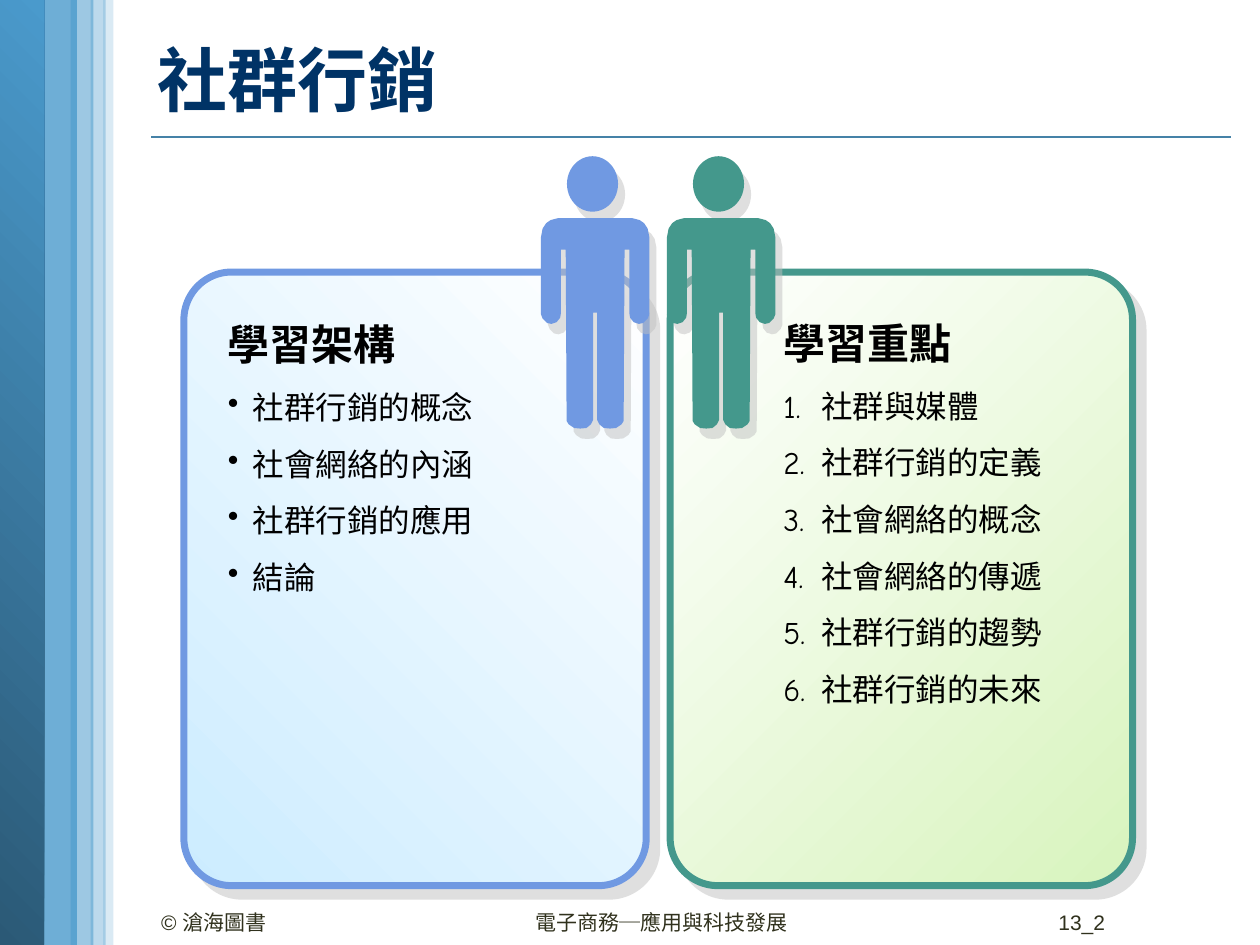
import pptx
import pptx.util
import pptx.dml.color
import pptx.enum.shapes
import pptx.enum.text
import pptx.oxml
import pptx.oxml.ns

Pt = pptx.util.Pt
SHAPE = pptx.enum.shapes.MSO_SHAPE
ALIGN = pptx.enum.text.PP_ALIGN
ANCHOR = pptx.enum.text.MSO_ANCHOR
qn = pptx.oxml.ns.qn

HUE = {
    "title": "003366", "rule": "4582A7", "band": "4A9ACC", "deep": "2B5976",
    "text": "000000", "foot": "30311D", "shade": "C0C0C0", "white": "FFFFFF",
    "blue": "7099E2", "sky": "CCECFF", "green": "44988C", "lime": "D8F4BE",
}
BODY = "Comic Neue"

# Left half of the body: distance from the centre line, distance from the top
HALF = [
    (21, 0), (25.5, 1.2), (28, 3), (30, 6), (31, 11), (31, 55), (30, 57.5),
    (27.5, 60), (25, 60.5), (22, 59.5), (20, 57), (19.5, 54), (19.5, 18),
    (16.8, 18), (16.3, 116), (15, 118), (12, 120), (8.5, 120.3), (5, 120),
    (2.5, 118), (1.2, 115.5), (1.2, 54),
]


def rgb(name):
    return pptx.dml.color.RGBColor.from_string(HUE[name])


def add_xml(parent, tag, **attrs):
    node = parent.makeelement(qn(tag), attrs)
    parent.append(node)
    return node


def paint(shape, name):
    shape.fill.solid()
    shape.fill.fore_color.rgb = rgb(name)
    shape.line.fill.background()
    shape.shadow.inherit = False


def blend(shape, first, last, angle):
    """Gradient fill whose angle runs counter-clockwise."""
    shape.fill.gradient()
    shape.fill.gradient_angle = angle
    for stop, name in zip(shape.fill.gradient_stops, (first, last)):
        stop.color.rgb = rgb(name)


def cast(shape, dist, angle):
    """Give the shape a half-clear hard shadow."""
    shape.shadow.inherit = False
    effects = shape._element.spPr.find(qn("a:effectLst"))
    shadow = add_xml(effects, "a:outerShdw", blurRad="0", dist=str(Pt(dist)),
                     dir=str(angle * 60000), algn="ctr", rotWithShape="0")
    color = add_xml(shadow, "a:srgbClr", val=HUE["shade"])
    add_xml(color, "a:alpha", val="50000")


def style(para, size, name, face=BODY, bold=False):
    para.font.size = Pt(size)
    para.font.name = face
    para.font.bold = bold
    para.font.color.rgb = rgb(name)


def add_frame(slide, x, y, w, h):
    frame = slide.shapes.add_textbox(Pt(x), Pt(y), Pt(w), Pt(h)).text_frame
    frame.word_wrap = True
    return frame


def add_side(slide, x, y, h):
    """Striped band down the left edge."""
    def bar(left, width):
        shape = slide.shapes.add_shape(SHAPE.RECTANGLE, Pt(x + left), Pt(y),
                                       Pt(width), Pt(h))
        paint(shape, "band")
        return shape

    def veil(left, width, alpha):
        color = bar(left, width)._element.spPr.find(
            qn("a:solidFill")).find(qn("a:srgbClr"))
        add_xml(color, "a:alpha", val=str(alpha * 1000))

    veil(21.6, 22.3, 80)
    blend(bar(-0.7, 25.9), "deep", "band", 45)
    for left, width, alpha in [(59, 5.8, 20), (40.3, 13, 54), (51.8, 8.6, 37)]:
        veil(left, width, alpha)


def add_title(slide, x, y, w, h, text):
    frame = add_frame(slide, x, y, w, h)
    frame.vertical_anchor = ANCHOR.MIDDLE
    frame.text = text
    style(frame.paragraphs[0], 40, "title", bold=True)
    rule = slide.shapes.add_connector(
        pptx.enum.shapes.MSO_CONNECTOR.STRAIGHT,
        Pt(x + 3.6), Pt(y + 73.5), Pt(x + 620.6), Pt(y + 73.5))
    rule.line.color.rgb = rgb("rule")
    rule.line.width = Pt(1)
    add_xml(rule._element.spPr, "a:effectLst")


def add_panel(slide, x, y, w, h, edge, first, last, angle):
    panel = slide.shapes.add_shape(SHAPE.ROUNDED_RECTANGLE,
                                   Pt(x), Pt(y), Pt(w), Pt(h))
    panel.adjustments[0] = 0.103
    blend(panel, first, last, angle)
    panel.line.color.rgb = rgb(edge)
    panel.line.width = Pt(4)
    cast(panel, 8.5, 45)


def add_man(slide, x, y, name):
    head = slide.shapes.add_shape(SHAPE.OVAL, Pt(x + 15.1), Pt(y),
                                  Pt(29.2), Pt(31.7))
    mid, top = x + 31.2, y + 35.3
    left = [(Pt(mid - d), Pt(top + v)) for d, v in HALF]
    right = [(Pt(mid + d), Pt(top + v)) for d, v in reversed(HALF)]
    pen = slide.shapes.build_freeform(*left[0])
    pen.add_line_segments(left[1:] + right, close=True)
    for part in (head, pen.convert_to_shape()):
        paint(part, name)
        cast(part, 7.2, 56)


def add_list(slide, x, y, w, h, head, items, hang, bullet=None):
    frame = add_frame(slide, x, y, w, h)
    frame.text = "\n".join([head] + items)
    for row, para in enumerate(frame.paragraphs):
        if row:
            props = para._p.get_or_add_pPr()
            props.set("marL", str(Pt(hang)))
            props.set("indent", str(-Pt(hang)))
            if bullet:
                add_xml(props, "a:buChar", char=bullet)
        para.line_spacing = 1.5
        style(para, 18 if row else 24, "text", bold=not row)


def add_foot(slide, y, h):
    for x, w, text, align in [
        (85, 167.8, "© 滄海圖書", ALIGN.LEFT),
        (298.8, 170, "電子商務─應用與科技發展", ALIGN.LEFT),
        (586.8, 51.8, "13_2", ALIGN.RIGHT),
    ]:
        frame = add_frame(slide, x, y, w, h)
        frame.text = text
        frame.paragraphs[0].alignment = align
        style(frame.paragraphs[0], 12, "foot", "Arial")


def main():
    deck = pptx.Presentation()
    deck.slide_width, deck.slide_height = Pt(720), Pt(540)
    slide = deck.slides.add_slide(deck.slide_layouts[6])

    add_side(slide, 0, 0, 540)
    add_title(slide, 82.8, 5, 626.4, 80, "社群行銷")

    top, wide, high = 155.5, 264.2, 350.6
    add_panel(slide, 105.1, top, wide, high, "blue", "sky", "white", 45)
    add_man(slide, 308.9, 89.3, "blue")
    add_list(slide, 123.1, 164.2, 223.2, 181.4, "學習架構",
             ["社群行銷的概念", "社會網絡的內涵", "社群行銷的應用", "結論"],
             14.4, "•")

    add_panel(slide, 383, top, wide, high, "green", "white", "lime", 315)
    topics = ["社群與媒體", "社群行銷的定義", "社會網絡的概念",
              "社會網絡的傳遞", "社群行銷的趨勢", "社群行銷的未來"]
    add_list(slide, 440.6, 163.4, 203.8, 250.6, "學習重點",
             [f"{n}.\t{topic}" for n, topic in enumerate(topics, 1)], 21.6)
    add_man(slide, 380.9, 89.3, "green")

    add_foot(slide, 516.2, 18.7)
    deck.save("out.pptx")


if __name__ == "__main__":
    main()
